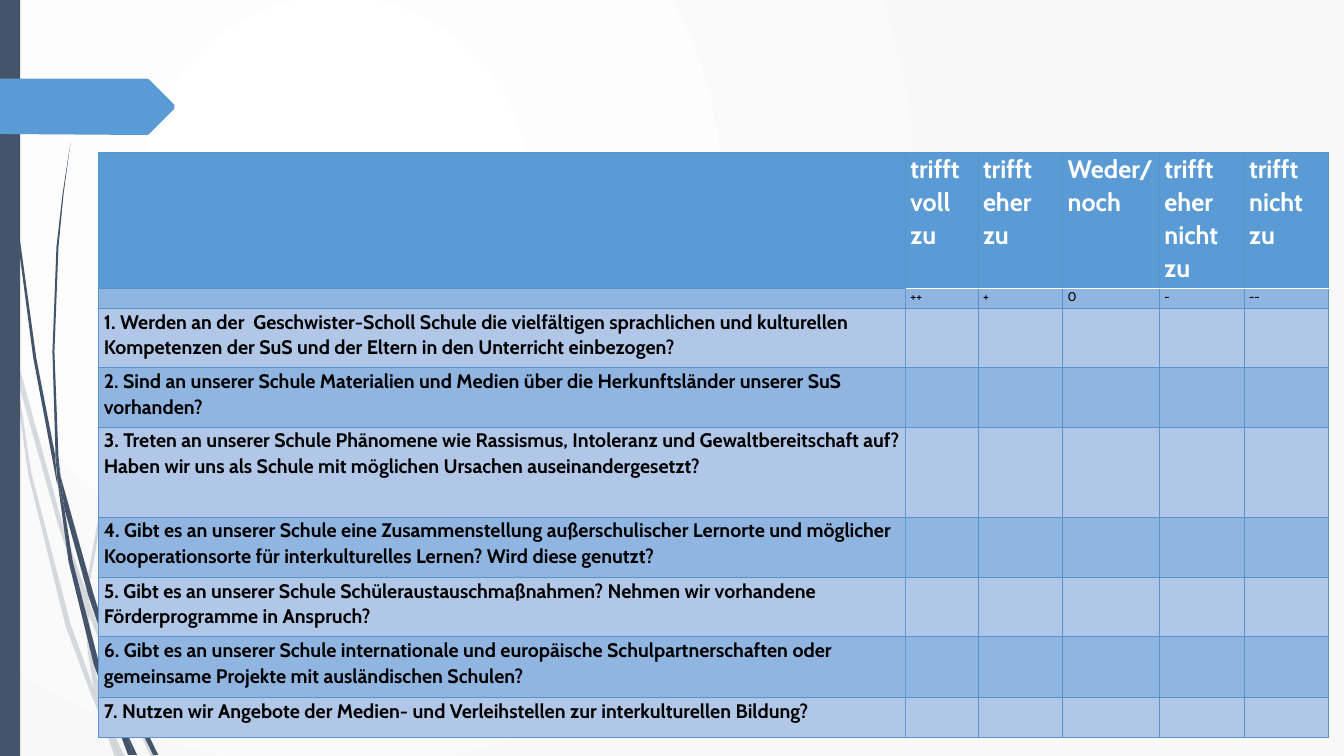
from dataclasses import dataclass

from lxml.etree import SubElement
from pptx import Presentation
from pptx.dml.color import RGBColor
from pptx.enum.shapes import MSO_SHAPE as Shape
from pptx.oxml.ns import qn
from pptx.util import Inches, Pt


@dataclass(frozen=True)
class Theme:
    font: str = "Cabin"
    slate: str = "44546A"
    blue: str = "5B9BD5"
    dark_row: str = "8FB5E0"
    light_row: str = "B1C7E7"
    border: str = "5794CB"
    white: str = "FFFFFF"
    pale: str = "F8F8F8"
    black: str = "000000"
    header_size: int = 18
    question_size: int = 14
    symbol_size: int = 9
    thin: float = 0.75
    thick: float = 1.25
    line_spacing: float = 1.07


THEME = Theme()

PALE_STRANDS = [
    [(11, 350), (9, 322), (0, 282), (0, 299), (10, 344)],
    [(58, 522), (84, 599), (85, 586), (62, 520), (14, 345), (17, 376)],
    [(92, 607), (88, 596), (88, 610), (123, 694), (150, 751), (155, 751), (127, 692)],
    [(119, 751), (124, 751), (105, 711)],
    [(93, 683), (70, 619), (31, 469), (17, 376), (11, 350), (28, 470), (65, 621),
     (92, 693), (101, 714), (99, 707)],
    [(84, 599), (87, 646), (93, 683), (96, 692), (105, 711), (103, 706), (91, 646),
     (88, 610), (88, 608)],
    [(88, 584), (110, 462), (160, 349), (229, 245), (268, 198), (290, 175), (312, 154),
     (312, 153), (289, 175), (268, 197), (228, 244), (158, 348), (107, 461), (85, 584),
     (85, 586), (88, 596)],
    [(101, 714), (114, 751), (119, 751)],
    [(88, 608), (88, 610), (88, 596), (85, 586), (84, 599)],
    [(96, 692), (93, 683), (99, 707), (101, 714), (119, 751), (105, 711)],
]

DARK_STRANDS = [
    [(7, 110), (17, 233), (33, 355), (56, 477), (57, 481), (55, 457), (55, 453), (36, 355),
     (19, 232), (8, 109), (5, 48), (4, 0), (3, 0), (4, 48)],
    [(88, 592), (106, 645), (106, 633), (106, 631), (93, 590), (60, 472), (64, 505)],
    [(113, 649), (110, 641), (111, 656), (132, 708), (152, 749), (157, 749), (136, 706)],
    [(110, 691), (98, 657), (72, 556), (64, 505), (57, 477), (68, 557), (93, 659),
     (111, 708), (117, 722), (116, 717)],
    [(60, 472), (58, 453), (54, 349), (58, 245), (63, 193), (70, 141), (62, 193), (56, 245),
     (52, 349), (55, 449)],
    [(133, 749), (136, 749), (122, 719)],
    [(57, 477), (64, 505), (60, 472), (55, 449), (55, 453)],
    [(111, 633), (125, 552), (158, 476), (205, 406), (231, 374), (245, 359), (261, 344),
     (260, 344), (245, 358), (231, 373), (204, 405), (156, 474), (122, 551), (106, 631),
     (110, 641)],
    [(117, 722), (127, 749), (131, 749)],
    [(106, 645), (110, 691), (116, 706), (122, 719), (121, 716), (111, 656), (109, 651)],
    [(106, 645), (109, 651), (111, 656), (110, 641), (106, 631), (106, 633)],
    [(116, 706), (110, 691), (116, 717), (117, 722), (130, 749), (133, 749), (122, 719)],
]

PENNANT = [(173, 104), (173, 108), (148, 133), (146, 134), (0, 133), (0, 78), (146, 78),
           (148, 79)]

COLUMN_WIDTHS = [8, 0.72, 0.84, 0.96, 0.84, 0.84]
ROW_HEIGHTS = [1.35, 0.2, 0.59, 0.59, 0.89, 0.6, 0.59, 0.6, 0.4]
HEADERS = ["", "trifft voll zu", "trifft eher zu", "Weder/\nnoch", "trifft eher nicht zu",
           "trifft nicht zu"]
SYMBOLS = ["", "++", "+", "0", "-", "--"]
QUESTIONS = [
    "1. Werden an der  Geschwister-Scholl Schule die vielfältigen sprachlichen und kulturellen "
    "Kompetenzen der SuS und der Eltern in den Unterricht einbezogen?",
    "2. Sind an unserer Schule Materialien und Medien über die Herkunftsländer unserer SuS "
    "vorhanden?",
    "3. Treten an unserer Schule Phänomene wie Rassismus, Intoleranz und Gewaltbereitschaft auf? "
    "Haben wir uns als Schule mit möglichen Ursachen auseinandergesetzt?",
    "4. Gibt es an unserer Schule eine Zusammenstellung außerschulischer Lernorte und möglicher "
    "Kooperationsorte für interkulturelles Lernen? Wird diese genutzt?",
    "5. Gibt es an unserer Schule Schüleraustauschmaßnahmen? Nehmen wir vorhandene "
    "Förderprogramme in Anspruch?",
    "6. Gibt es an unserer Schule internationale und europäische Schulpartnerschaften oder "
    "gemeinsame Projekte mit ausländischen Schulen?",
    "7. Nutzen wir Angebote der Medien- und Verleihstellen zur interkulturellen Bildung?",
]


def paint_background(page):
    fill = page.background.fill
    fill.gradient()
    for stop, color in zip(fill.gradient_stops, (THEME.white, THEME.pale)):
        stop.color.rgb = RGBColor.from_string(color)
    gradient = page.element.find(".//" + qn("a:gradFill"))
    gradient.remove(gradient.find(qn("a:lin")))
    circle = SubElement(gradient, qn("a:path"), path="circle")
    SubElement(circle, qn("a:fillToRect"), l="50000", t="50000", r="100000", b="100000")


def paint_shape(shape, color, alpha=100):
    shape.shadow.inherit = False
    shape.fill.solid()
    shape.fill.fore_color.rgb = RGBColor.from_string(color)
    shape.line.fill.background()
    if alpha < 100:
        tone = shape.element.spPr.find(".//" + qn("a:srgbClr"))
        SubElement(tone, qn("a:alpha"), val=str(alpha * 1000))


def add_outline(shapes, points, color, alpha=100):
    builder = shapes.build_freeform(*points[0], scale=Inches(0.01))
    builder.add_line_segments(points[1:], close=True)
    paint_shape(builder.convert_to_shape(), color, alpha)


def add_strands(page, strands, alpha):
    group = page.shapes.add_group_shape()
    for points in strands:
        add_outline(group.shapes, points, THEME.slate, alpha)


def set_borders(cell, row, column):
    edges = {side: (THEME.border, THEME.thin) for side in "LRTB"}
    if column and row < 2:
        edges["B" if row == 0 else "T"] = (THEME.white, THEME.thick)
    if row and column < 2:
        edges["R" if column == 0 else "L"] = (THEME.blue, THEME.thick)
    properties = cell._tc.get_or_add_tcPr()
    for position, (side, (color, width)) in enumerate(edges.items()):
        line = SubElement(properties, qn("a:ln" + side), w=str(Pt(width)))
        SubElement(SubElement(line, qn("a:solidFill")), qn("a:srgbClr"), val=color)
        properties.insert(position, line)


def write_cell(cell, text, size, color, bold):
    cell.margin_left = cell.margin_right = Inches(0.05)
    cell.margin_top = cell.margin_bottom = 0
    frame = cell.text_frame
    for number, words in enumerate(text.split("\n")):
        para = frame.add_paragraph() if number else frame.paragraphs[0]
        para.line_spacing = THEME.line_spacing
        if not words:
            SubElement(para._p, qn("a:endParaRPr"), sz=str(THEME.symbol_size * 100))
            continue
        span = para.add_run()
        span.text = words
        span.font.name = THEME.font
        span.font.size = Pt(size)
        span.font.bold = bold
        span.font.color.rgb = RGBColor.from_string(color)


def add_survey(page):
    rows = [HEADERS, SYMBOLS] + [[question] + [""] * 5 for question in QUESTIONS]
    styles = [(THEME.header_size, THEME.white, True), (THEME.symbol_size, THEME.black, False)]
    styles += [(THEME.question_size, THEME.black, True)] * len(QUESTIONS)
    frame = page.shapes.add_table(len(rows), len(HEADERS), Inches(0.98), Inches(1.51),
                                  Inches(sum(COLUMN_WIDTHS)), Inches(sum(ROW_HEIGHTS)))
    table = frame.table
    table.first_row = table.horz_banding = False
    for column, width in zip(table.columns, COLUMN_WIDTHS):
        column.width = Inches(width)
    for row, (texts, style) in enumerate(zip(rows, styles)):
        table.rows[row].height = Inches(ROW_HEIGHTS[row])
        band = THEME.dark_row if row % 2 else THEME.light_row
        for column, text in enumerate(texts):
            cell = table.cell(row, column)
            cell.fill.solid()
            cell.fill.fore_color.rgb = RGBColor.from_string(band if row else THEME.blue)
            set_borders(cell, row, column)
            write_cell(cell, text, *style)


def main():
    deck = Presentation()
    deck.slide_width = Inches(13.33)
    deck.slide_height = Inches(7.5)
    page = deck.slides.add_slide(deck.slide_layouts[6])
    paint_background(page)
    add_strands(page, PALE_STRANDS, 20)
    add_strands(page, DARK_STRANDS, 100)
    bar = page.shapes.add_shape(Shape.RECTANGLE, 0, 0, Inches(0.2), Inches(7.5))
    paint_shape(bar, THEME.slate)
    add_outline(page.shapes, PENNANT, THEME.blue)
    add_survey(page)
    deck.save("out.pptx")


if __name__ == "__main__":
    main()
